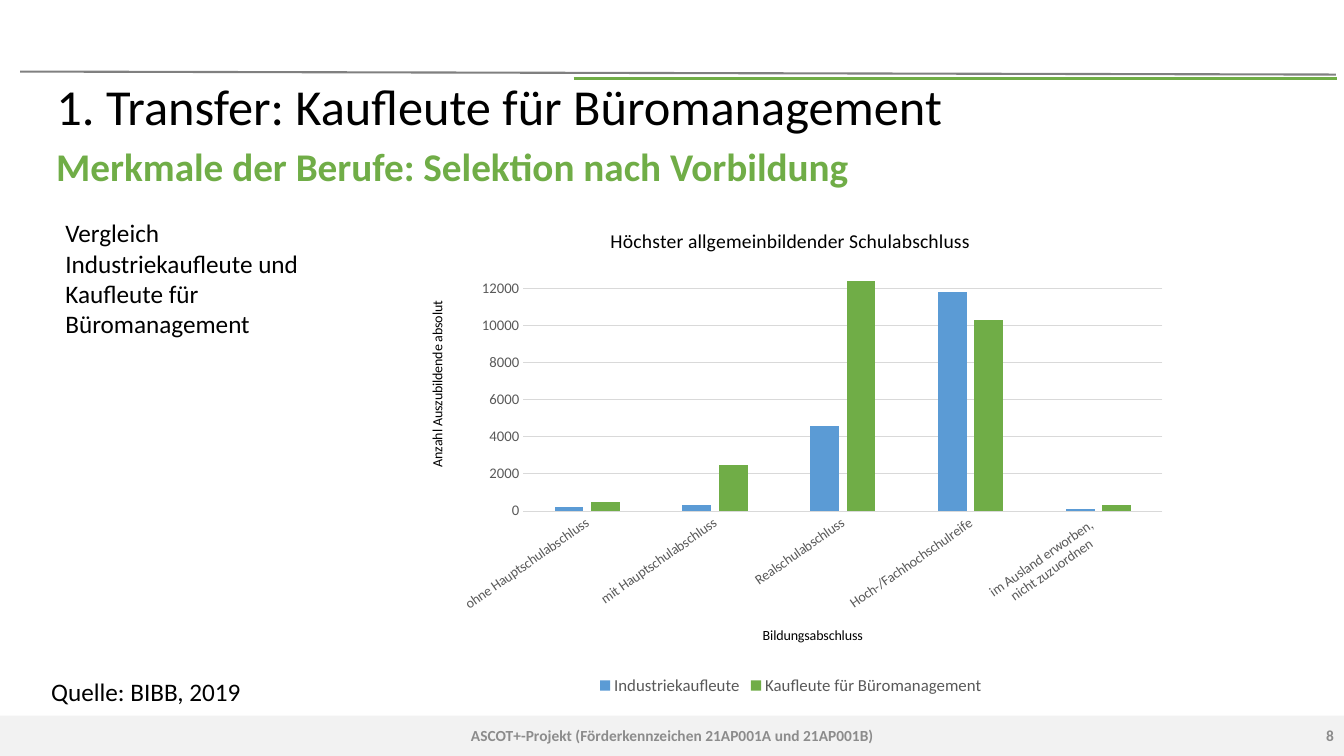
"""Build a slide comparing the schooling of apprentices in two office occupations."""
from lxml import etree
from pptx import Presentation, util as u
from pptx.chart.data import CategoryChartData
from pptx.dml.color import RGBColor
from pptx.enum import chart as charts, shapes, text
from pptx.oxml import parse_xml
from pptx.oxml.ns import nsdecls, qn

GREEN, BLUE, GREY, PALE, BLACK = "70AD47", "5B9BD5", "595959", "D9D9D9", "000000"
CHART_WIDTH, CHART_HEIGHT = 7.67, 4.87


def style(font, size, color=BLACK, bold=False):
    """Set the font of a text or chart part."""
    font.name, font.size, font.bold = "Calibri", u.Pt(size), bold
    font.color.rgb = RGBColor.from_string(color)


def write(box, words, size, color=BLACK, bold=False, align=text.PP_ALIGN.LEFT,
          anchor=text.MSO_ANCHOR.TOP, spacing=1.0, wrap=True):
    """Fill a box with one formatted paragraph."""
    frame = box.text_frame
    frame.word_wrap, frame.vertical_anchor = wrap, anchor
    frame.auto_size = text.MSO_AUTO_SIZE.NONE
    para = frame.paragraphs[0]
    para.alignment, para.line_spacing = align, spacing
    span = para.add_run()
    span.text = words
    style(span.font, size, color, bold)


deck = Presentation()
deck.slide_width, deck.slide_height = u.Inches(13.33), u.Inches(7.5)
page = deck.slides.add_slide(deck.slide_layouts[5])

footer = page.shapes.add_shape(shapes.MSO_SHAPE.RECTANGLE, 0, u.Inches(7.1),
                               deck.slide_width, u.Inches(0.4))
footer.shadow.inherit = False
footer.fill.solid()
footer.fill.fore_color.rgb = RGBColor.from_string("F2F2F2")
footer.line.fill.background()

for left, top, right, bottom, color, width in [
    (0.2, 0.71, 13.25, 0.74, "808080", 1.5),
    (5.69, 0.78, 13.26, 0.78, GREEN, 2.25),
]:
    rule = page.shapes.add_connector(shapes.MSO_CONNECTOR.STRAIGHT, u.Inches(left),
                                     u.Inches(top), u.Inches(right), u.Inches(bottom))
    rule.line.color.rgb = RGBColor.from_string(color)
    rule.line.width = u.Pt(width)
    etree.SubElement(rule._element.spPr, qn("a:effectLst"))

title = page.shapes.title
title.left, title.top = u.Inches(0.46), u.Inches(0.79)
title.width, title.height = u.Inches(12.2), u.Inches(0.59)
write(title, "1. Transfer: Kaufleute für Büromanagement", 36,
      anchor=text.MSO_ANCHOR.MIDDLE, spacing=0.9)

footer_format = dict(size=11, color="8C8C8C", bold=True, anchor=text.MSO_ANCHOR.MIDDLE)
for left, top, width, height, words, options in [
    (0.46, 1.42, 12.3, 0.6, "Merkmale der Berufe: Selektion nach Vorbildung",
     dict(size=28, color=GREEN, bold=True, spacing=0.9)),
    (0.55, 2.11, 2.65, 1.31,
     "Vergleich Industriekaufleute und Kaufleute für Büromanagement", dict(size=18)),
    (0.41, 6.66, 2.1, 0.4, "Quelle: BIBB, 2019", dict(size=18, wrap=False)),
    (4.42, 7.1, 4.5, 0.4, "ASCOT+-Projekt (Förderkennzeichen 21AP001A und 21AP001B)",
     dict(footer_format, align=text.PP_ALIGN.CENTER)),
    (10.33, 7.1, 3, 0.4, "8", dict(footer_format, align=text.PP_ALIGN.RIGHT)),
]:
    box = page.shapes.add_textbox(u.Inches(left), u.Inches(top),
                                  u.Inches(width), u.Inches(height))
    write(box, words, **options)

data = CategoryChartData()
data.categories = ["ohne Hauptschulabschluss", "mit Hauptschulabschluss",
                   "Realschulabschluss", "Hoch-/Fachhochschulreife",
                   "im Ausland erworben, \nnicht zuzuordnen"]
data.add_series("Industriekaufleute", [200, 300, 4600, 11800, 100])
data.add_series("Kaufleute für Büromanagement", [500, 2500, 12400, 10300, 300])
chart = page.shapes.add_chart(charts.XL_CHART_TYPE.COLUMN_CLUSTERED, u.Inches(4.01),
                              u.Inches(2.07), u.Inches(CHART_WIDTH),
                              u.Inches(CHART_HEIGHT), data).chart
style(chart.font, 10)

plot = chart.plots[0]
plot.vary_by_categories, plot.gap_width, plot.overlap = False, 219, -27
for series, color in zip(plot.series, [BLUE, GREEN]):
    series.format.fill.solid()
    series.format.fill.fore_color.rgb = RGBColor.from_string(color)

chart.has_legend = True
chart.legend.position = charts.XL_LEGEND_POSITION.BOTTOM
chart.legend.include_in_layout = False
style(chart.legend.font, 12, GREY)

categories, values = chart.category_axis, chart.value_axis
for axis, size in [(categories, 10), (values, 10.5)]:
    axis.major_tick_mark = axis.minor_tick_mark = charts.XL_TICK_MARK.NONE
    style(axis.tick_labels.font, size, GREY)
categories.format.line.color.rgb = RGBColor.from_string(PALE)
categories.format.line.width = u.Pt(0.75)
categories._element.find(qn("c:txPr")).find(qn("a:bodyPr")).set("rot", "-2100000")
values.minimum_scale, values.maximum_scale, values.major_unit = 0, 13000, 2000
values.format.line.fill.background()
values.major_gridlines.format.line.color.rgb = RGBColor.from_string(PALE)
values.major_gridlines.format.line.width = u.Pt(0.75)

placements = [(chart._chartSpace.chart.plotArea, '<c:layoutTarget val="inner"/>',
               dict(x=1.18, y=0.61, w=6.34, h=2.39))]
for heading, words, size, x, y in [
    (chart.chart_title, "Höchster allgemeinbildender Schulabschluss", 14, 2.01, 0.15),
    (categories.axis_title, "Bildungsabschluss", 10, 3.53, 4.12),
    (values.axis_title, "Anzahl Auszubildende absolut", 10, 0.21, 0.89),
]:
    span = heading.text_frame.paragraphs[0].add_run()
    span.text = words
    style(span.font, size)
    placements.append((heading._element, "", dict(x=x, y=y)))
values.axis_title.text_frame._txBody.find(qn("a:bodyPr")).set("rot", "-5400000")

extents = dict(x=CHART_WIDTH, y=CHART_HEIGHT, w=CHART_WIDTH, h=CHART_HEIGHT)
for part, target, sizes in placements:
    modes = "".join(f'<c:{side}Mode val="edge"/>' for side in "xy")
    lengths = "".join(f'<c:{side} val="{length / extents[side]:.4f}"/>'
                      for side, length in sizes.items())
    layout = parse_xml(f'<c:layout {nsdecls("c")}><c:manualLayout>{target}{modes}{lengths}'
                       '</c:manualLayout></c:layout>')
    for old in part.findall(qn("c:layout")):
        part.remove(old)
    part.insert(1 if part.find(qn("c:tx")) is not None else 0, layout)

deck.save("out.pptx")
